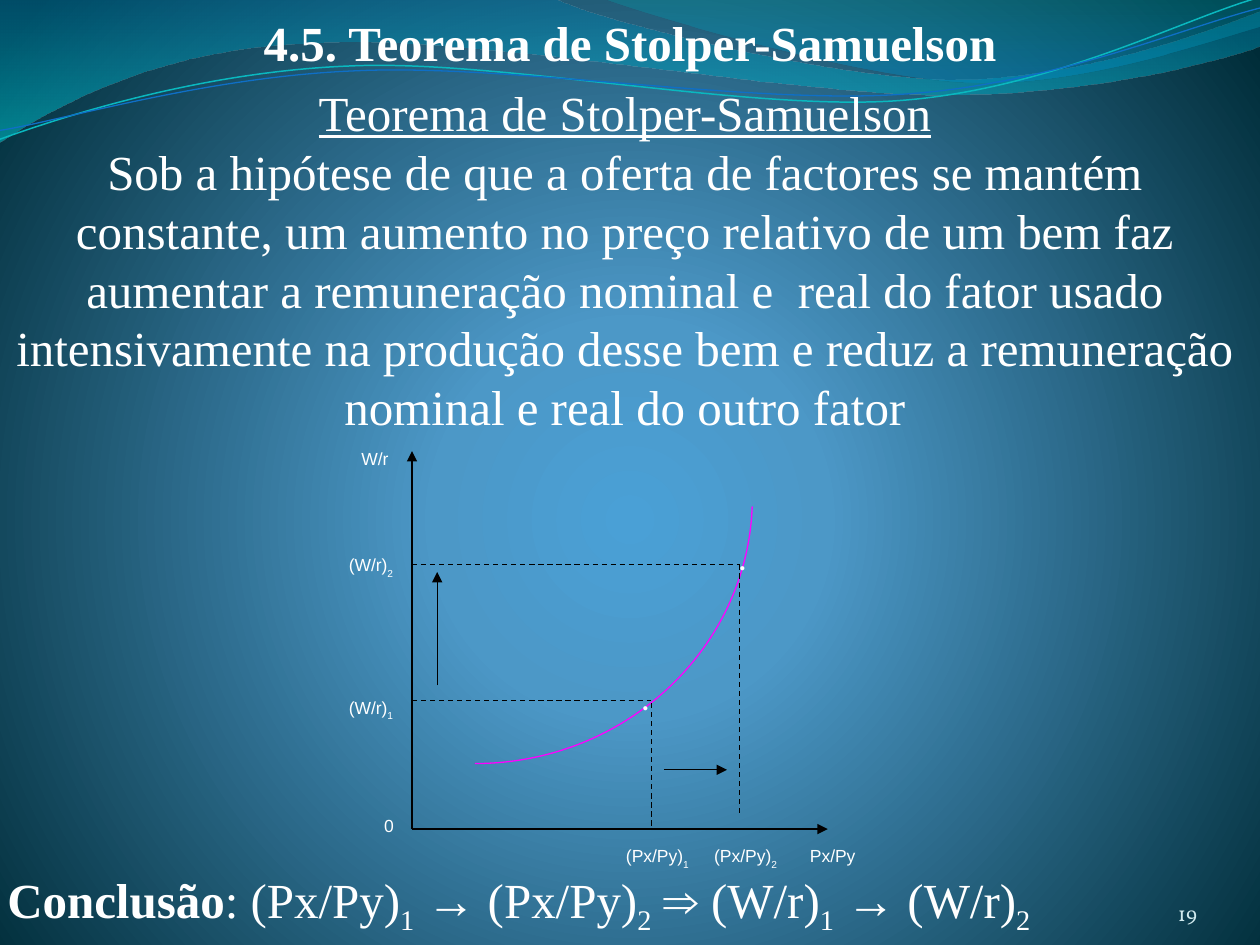
from lxml import etree
from pptx import Presentation
from pptx.dml.color import RGBColor
from pptx.enum import dml, shapes as sh, text as tx
from pptx.oxml import parse_xml
from pptx.oxml.ns import nsdecls, qn
from pptx.util import Inches, Pt

WHITE = RGBColor(0xFF, 0xFF, 0xFF)
BLACK = RGBColor(0, 0, 0)
PALE = RGBColor(0xD1, 0xEA, 0xEE)
PINK = RGBColor(0xFF, 0, 0xFF)
TEAL = RGBColor(0x0A, 0xB8, 0xBF)
BLUE = RGBColor(0x0F, 0x6F, 0xC6)
SERIF, SANS = "Times New Roman", "Arial"

# Content
TITLE = "4.5. Teorema de Stolper-Samuelson"
HEAD = "Teorema de Stolper-Samuelson"
BODY = ("Sob a hipótese de que a oferta de factores se mantém constante, "
        "um aumento no preço relativo de um bem faz aumentar a remuneração "
        "nominal e  real do fator usado intensivamente na produção desse bem "
        "e reduz a remuneração nominal e real do outro fator")
# Text and subscript pairs
END = [(": (Px/Py)", "1"), (" → (Px/Py)", "2"),
       (" ⇒ (W/r)", "1"), (" → (W/r)", "2")]
LABELS = [  # left, top, text, subscript
    (2.77, 3.51, "W/r", ""), (2.67, 4.35, "(W/r)", "2"),
    (2.67, 5.48, "(W/r)", "1"), (2.95, 6.42, "0", ""),
    (4.87, 6.66, "(Px/Py)", "1"), (5.57, 6.66, "(Px/Py)", "2"),
    (6.33, 6.66, "Px/Py", "")]
DOTS = [(5.77, 4.37), (5, 5.48)]

# Chart geometry
X0, Y0 = 3.27, 6.58
ARROWS = [(X0, Y0, X0, 3.58), (X0, Y0, 6.57, Y0),
          (5.27, 6.11, 5.77, 6.11), (3.47, 5.44, 3.47, 4.54)]
DASHES = [(X0, 4.48, 5.87, 4.48), (5.87, 4.48, 5.87, 6.48),
          (X0, 5.56, 5.17, 5.56), (5.17, 5.58, 5.17, Y0)]
CURVE = [(3.77, 6.06), (4.96, 6.06, 5.93, 5.15, 5.97, 4.02)]

# Waves: a step of two numbers is a corner, of six a Bezier curve
BANDS = [
    ([(0, 0), (4.4, -0.01), (4.76, 0.17, 6.64, 0.63, 7.58, 0.63),
      (8.53, 0.63, 9.58, 0.26, 10, 0.09), (10.01, 0.36),
      (9.83, 0.44, 8.7, 0.76, 7.46, 0.75),
      (6.22, 0.75, 3.82, 0.28, 2.57, 0.34),
      (1.29, 0.36, 0.46, 0.83, -0.01, 1.13)],
     [(0, "0074A1", 45), (100, "00C6CF", 55)]),
    ([(4.79, -0.01), (5.09, 0.11, 6.82, 0.62, 7.69, 0.65),
      (8.56, 0.69, 9.61, 0.32, 10, 0.21), (10, 0)],
     [(0, "00A1A9", 30), (80, "008BBF", 45)])]
TILT = -2.7
WAVES = [  # before tilting
    ([(-0.02, 0.87), (0.47, 0.72, 1.58, 0.41, 2.78, 0.42),
      (3.96, 0.42, 5.91, 0.93, 7.12, 0.9),
      (8.32, 0.87, 9.4, 0.36, 10, 0.22)], TEAL, 0.85),
    ([(-0.02, 0.8), (0.46, 0.75, 1.64, 0.45, 2.83, 0.46),
      (4.04, 0.46, 5.96, 0.88, 7.16, 0.85),
      (8.35, 0.83, 9.42, 0.42, 10.02, 0.3)], BLUE, 0.75)]
GLOW = [(0, "4AA0D6", 100), (25, "4C98C7", 100), (100, "002C38", 100)]
DOWN = '<a:lin ang="5400000" scaled="0"/>'
ROUND = ('<a:path path="circle"><a:fillToRect l="10000" t="110000" '
         'r="10000" b="100000"/></a:path>')

prs = Presentation()
prs.slide_width, prs.slide_height = Inches(10), Inches(7.5)
slide = prs.slides.add_slide(prs.slide_layouts[5])
items = slide.shapes


def blend(fill, host, stops, way):
    """Give host a gradient with the given stops and direction."""
    fill.solid()
    gs = "".join(
        f'<a:gs pos="{pos * 1000}"><a:srgbClr val="{rgb}">'
        f'<a:alpha val="{op * 1000}"/></a:srgbClr></a:gs>'
        for pos, rgb, op in stops)
    new = parse_xml(f'<a:gradFill {nsdecls("a")} rotWithShape="1">'
                    f'<a:gsLst>{gs}</a:gsLst>{way}</a:gradFill>')
    host.replace(host.find(qn("a:solidFill")), new)


def outline(steps, close):
    """Draw all points as corners, then join triples into Bezier curves."""
    pts = [(Inches(s[i]), Inches(s[i + 1]))
           for s in steps for i in range(0, len(s), 2)]
    pen = items.build_freeform(*pts[0])
    pen.add_line_segments(pts[1:], close=close)
    shape = pen.convert_to_shape()
    shape.shadow.inherit = False
    legs = iter(list(shape._element.iter(qn("a:lnTo"))))
    for step in steps[1:]:
        leg = next(legs)
        if len(step) == 6:
            bend = etree.Element(qn("a:cubicBezTo"))
            leg.addprevious(bend)
            for part in (leg, next(legs), next(legs)):
                bend.append(part[0])
                part.getparent().remove(part)
    return shape


def stroke(steps, color, width, turn=0):
    shape = outline(steps, False)
    shape.fill.background()
    shape.line.color.rgb = color
    shape.line.width = Pt(width)
    shape.rotation = turn


def line(ends, dash=False):
    con = items.add_connector(sh.MSO_CONNECTOR.STRAIGHT,
                              *[Inches(v) for v in ends])
    con.line.color.rgb = BLACK
    con.line.width = Pt(0.75)
    props = con._element.spPr
    if dash:
        con.line.dash_style = dml.MSO_LINE.DASH
    else:
        etree.SubElement(props.find(qn("a:ln")), qn("a:tailEnd"),
                         type="triangle")
    etree.SubElement(props, qn("a:effectLst"))


def place(shape, box):
    shape.left, shape.top, shape.width, shape.height = map(Inches, box)


def style(frame, size, face, color=WHITE, align=tx.PP_ALIGN.LEFT,
          anchor=tx.MSO_ANCHOR.TOP):
    frame.word_wrap = True
    grow = size == 28
    frame.auto_size = (tx.MSO_AUTO_SIZE.SHAPE_TO_FIT_TEXT if grow
                       else tx.MSO_AUTO_SIZE.NONE)
    frame.vertical_anchor = anchor
    para = frame.paragraphs[0]
    para.alignment = align
    para.font.size, para.font.name = Pt(size), face
    para.font.color.rgb = color
    return para


def write(box, words, *look, **more):
    shape = items.add_textbox(*map(Inches, box))
    para = style(shape.text_frame, *look, **more)
    para.add_run().text = words
    return para


def lower(para, words, base):
    run = para.add_run()
    run.text = words
    run._r.get_or_add_rPr().set("baseline", str(base * 1000))


# Background and waves
fill = slide.background.fill
fill.solid()
blend(fill, slide._element.find(".//" + qn("p:bgPr")), GLOW, ROUND)
for steps, stops in BANDS:
    band = outline(steps, True)
    band.line.fill.background()
    blend(band.fill, band._element.spPr, stops, DOWN)
for wave in WAVES:
    stroke(*wave, turn=TILT)

# Title, in front of the waves
title = items.title
items._spTree.append(title._element)
place(title, (0, 0.05, 10, 0.57))
title.text_frame.text = TITLE
style(title.text_frame, 28, SERIF, align=tx.PP_ALIGN.CENTER).font.bold = True

# Statement and page number
mid = dict(align=tx.PP_ALIGN.CENTER, anchor=tx.MSO_ANCHOR.MIDDLE)
write((-0.04, 0.6, 10, 0.57), HEAD, 28, SERIF, **mid).font.underline = True
write((-0.04, 1.06, 10, 2.46), BODY, 28, SERIF, **mid)
write((8.67, 6.95, 0.83, 0.4), "19", 12, "Vollkorn", PALE,
      align=tx.PP_ALIGN.RIGHT, anchor=tx.MSO_ANCHOR.BOTTOM)
frame = items[-1].text_frame
frame.margin_left = frame.margin_right = 0
frame.margin_top = frame.margin_bottom = 0

# Chart
stroke(CURVE, PINK, 0.75)
for ends in ARROWS:
    line(ends)
for ends in DASHES:
    line(ends, dash=True)
for x, y, words, sub in LABELS:
    para = write((x, y, 0.8, 0.4), words, 10, SANS)
    if sub:
        lower(para, sub, -30)
for x, y in DOTS:
    write((x, y, 0.8, 0.4), "•", 10, SERIF)

# Conclusion
para = write((-0.04, 6.88, 10, 0.57), "Conclusão", 28, SERIF,
             anchor=tx.MSO_ANCHOR.MIDDLE)
para.runs[0].font.bold = True
for words, sub in END:
    para.add_run().text = words
    lower(para, sub, -25)

prs.save("out.pptx")
